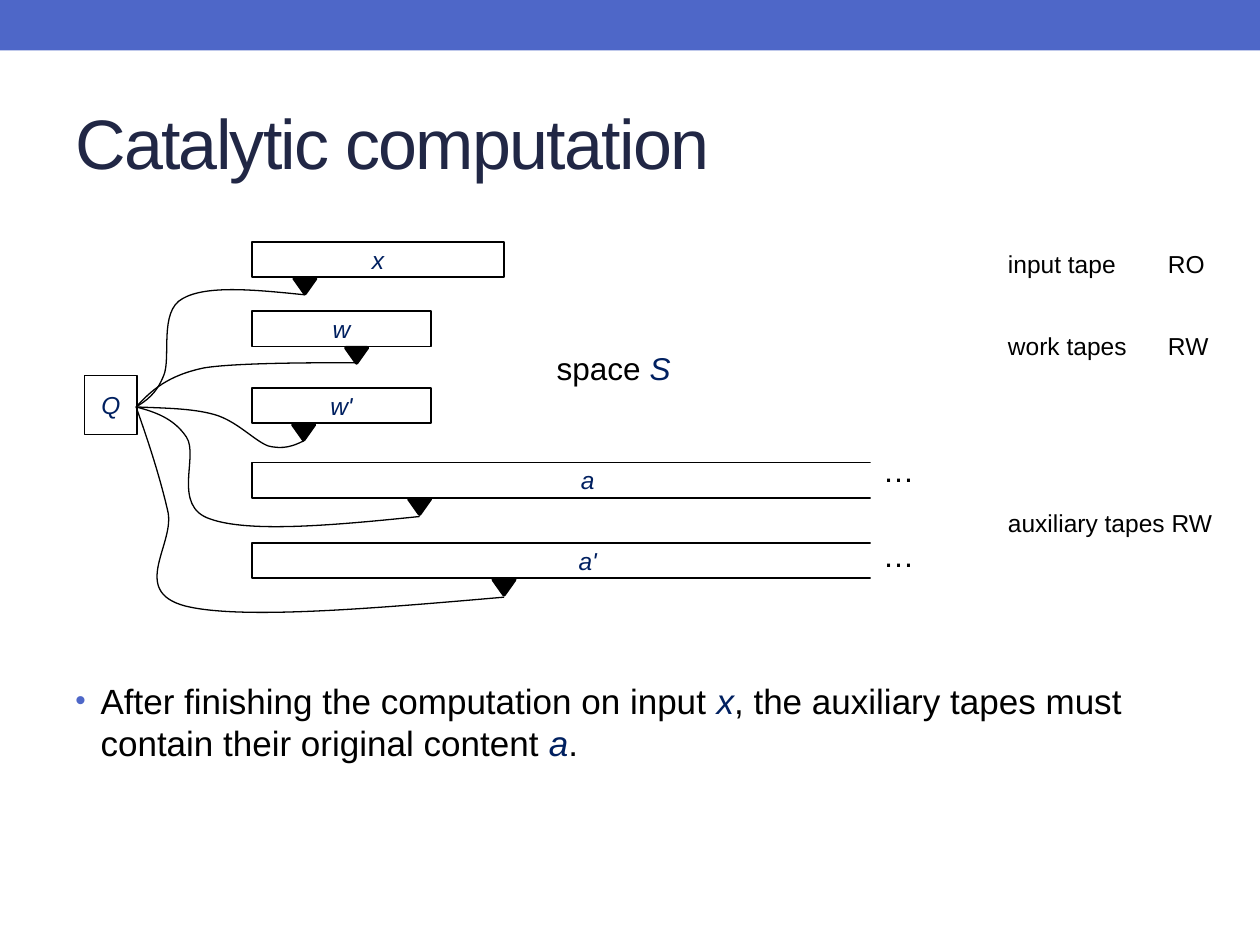
from dataclasses import dataclass

import pptx
import pptx.dml.color
import pptx.enum.shapes
import pptx.enum.text
import pptx.oxml.ns
import pptx.util
from lxml import etree
from pptx.util import Inches

SHAPE = pptx.enum.shapes.MSO_SHAPE
ANCHOR = pptx.enum.text.MSO_ANCHOR
ALIGN = pptx.enum.text.PP_ALIGN


def rgb(code):
    return pptx.dml.color.RGBColor.from_string(code)


@dataclass(frozen=True)
class Theme:
    font: str = "Arial"
    accent: str = "4E67C8"
    heading: str = "212745"
    ink: str = "000000"
    symbol: str = "002060"
    paper: str = "FFFFFF"
    title_size: int = 40
    body_size: int = 20
    note_size: int = 18
    label_size: int = 14


THEME = Theme()


@dataclass(frozen=True)
class Box:
    left: float
    top: float
    width: float
    height: float

    def inner(self, left, top, width, height):
        return Box(self.left + left, self.top + top, width, height)

    def lengths(self):
        return [Inches(v) for v in (self.left, self.top, self.width, self.height)]


@dataclass(frozen=True)
class Tape:
    symbol: str
    top: float
    width: float
    wire: tuple  # Bezier control points from the control unit to the head tip


TAPE_LEFT, TAPE_HEIGHT = 1.33, 0.28
WIRE_START = (0.41, 1.31)
TAPES = (
    Tape("x", 0, 2, (
        (0.49, 1.26), (0.57, 1.21), (0.63, 1.06), (0.69, 0.92), (0.59, 0.55),
        (0.78, 0.45), (0.97, 0.34), (1.36, 0.38), (1.75, 0.42))),
    Tape("w", 0.55, 1.42, (
        (0.53, 1.18), (0.66, 1.06), (0.95, 1.0),
        (1.25, 0.95), (2.16, 0.96), (2.16, 0.96))),
    Tape("w'", 1.16, 1.42, (
        (0.63, 1.32), (0.85, 1.32), (1.03, 1.37), (1.21, 1.42), (1.35, 1.58),
        (1.46, 1.62), (1.58, 1.65), (1.66, 1.62), (1.74, 1.58))),
    Tape("a", 1.75, 5.33, (
        (0.56, 1.35), (0.71, 1.4), (0.81, 1.55), (0.91, 1.7), (0.69, 2.1),
        (1.0, 2.2), (1.31, 2.31), (1.98, 2.25), (2.66, 2.18))),
    Tape("a'", 2.39, 5.33, (
        (0.51, 1.59), (0.6, 1.87), (0.66, 2.13), (0.73, 2.39), (0.35, 2.77),
        (0.8, 2.89), (1.24, 3.0), (2.29, 2.91), (3.33, 2.82))),
)


def style_shape(shape, fill=None, line=None, weight=1):
    shape.shadow.inherit = False
    if fill:
        shape.fill.solid()
        shape.fill.fore_color.rgb = rgb(fill)
    else:
        shape.fill.background()
    if line:
        shape.line.color.rgb = rgb(line)
        shape.line.width = pptx.util.Pt(weight)
    else:
        shape.line.fill.background()


def add_preset(page, kind, box, **style):
    shape = page.shapes.add_shape(kind, *box.lengths())
    style_shape(shape, **style)
    return shape


def set_frame(frame, anchor, across=0.1, down=0.05):
    frame.word_wrap = True
    frame.vertical_anchor = anchor
    frame.margin_left = frame.margin_right = Inches(across)
    frame.margin_top = frame.margin_bottom = Inches(down)


def write(para, spans, size, align=ALIGN.LEFT):
    """Fill a paragraph from (text, colour) pairs; symbols are set in italics."""
    para.alignment = align
    para.font.name = THEME.font
    para.font.size = pptx.util.Pt(size)
    for text, colour in spans:
        span = para.add_run()
        span.text = text
        span.font.color.rgb = rgb(colour)
        span.font.italic = colour == THEME.symbol


def add_text(page, box, spans, size, anchor=ANCHOR.TOP, **margins):
    frame = page.shapes.add_textbox(*box.lengths()).text_frame
    set_frame(frame, anchor, **margins)
    write(frame.paragraphs[0], spans, size)
    return frame.paragraphs[0]


def add_child(parent, tag, **attributes):
    return etree.SubElement(parent, pptx.oxml.ns.qn(tag), attributes)


def add_symbol_box(page, box, symbol):
    shape = add_preset(page, SHAPE.RECTANGLE, box, line=THEME.ink)
    set_frame(shape.text_frame, ANCHOR.MIDDLE, 0, 0.02)
    write(shape.text_frame.paragraphs[0], [(symbol, THEME.symbol)],
          THEME.label_size, ALIGN.CENTER)


def bezier_points(start, controls, steps=16):
    for index in range(0, len(controls), 3):
        corners = (start, *controls[index:index + 3])
        for step in range(1, steps + 1):
            t = step / steps
            weights = ((1 - t) ** 3, 3 * t * (1 - t) ** 2, 3 * t * t * (1 - t), t ** 3)
            yield tuple(sum(w * c[axis] for w, c in zip(weights, corners))
                        for axis in (0, 1))
        start = corners[3]


def add_wire(page, box, controls):
    """Draw a Bezier wire; points along the curve only give its tight bounds."""
    def place(point):
        return Inches(box.left + point[0]), Inches(box.top + point[1])

    builder = page.shapes.build_freeform(*place(WIRE_START))
    builder.add_line_segments([place(p) for p in bezier_points(WIRE_START, controls)],
                              close=False)
    wire = builder.convert_to_shape()
    style_shape(wire, line=THEME.ink, weight=0.75)
    outline = wire._element.find(".//" + pptx.oxml.ns.qn("a:path"))
    for segment in outline.findall(pptx.oxml.ns.qn("a:lnTo")):
        outline.remove(segment)
    for index, point in enumerate(controls):
        if index % 3 == 0:
            curve = add_child(outline, "a:cubicBezTo")
        x, y = place(point)
        add_child(curve, "a:pt", x=str(x - wire.left), y=str(y - wire.top))


def add_tape(page, box, tape):
    add_symbol_box(page, box.inner(TAPE_LEFT, tape.top, tape.width, TAPE_HEIGHT),
                   tape.symbol)
    tip = tape.wire[-1][0]
    head = add_preset(page, SHAPE.ISOSCELES_TRIANGLE,
                      box.inner(tip - 0.085, tape.top + TAPE_HEIGHT + 0.01, 0.17, 0.12),
                      fill=THEME.ink, line=THEME.ink, weight=2.08)
    head.rotation = 180
    add_wire(page, box, tape.wire)


def add_open_ends(page, box):
    """Cover the right ends of the auxiliary tapes and show that they go on."""
    frame = add_preset(page, SHAPE.RECTANGLE, box, fill=THEME.paper).text_frame
    set_frame(frame, ANCHOR.BOTTOM)
    for para in (frame.paragraphs[0], frame.add_paragraph()):
        write(para, [("…", THEME.ink)], THEME.note_size)
    para.space_before = pptx.util.Pt(26.5)


def add_machine(page, box):
    add_symbol_box(page, box.inner(0, 1.06, 0.42, 0.47), "Q")
    for tape in TAPES:
        add_tape(page, box, tape)
    add_open_ends(page, box.inner(6.24, 0.58, 1, 2.1))
    add_text(page, box.inner(3.65, 0.8, 1.25, 0.4),
             [("space ", THEME.ink), ("S", THEME.symbol)], THEME.note_size)


def add_tape_labels(page, box):
    labels = ((0, "input tape\tRO"), (0.65, "work tapes\tRW"), (2.05, "auxiliary tapes RW"))
    for top, label in labels:
        para = add_text(page, box.inner(0, top, box.width, TAPE_HEIGHT),
                        [(label, THEME.ink)], THEME.label_size, across=0, down=0.02)
        if "\t" in label:
            stops = etree.Element(pptx.oxml.ns.qn("a:tabLst"))
            add_child(stops, "a:tab", pos=str(Inches(1.27)), algn="l")
            para._p.pPr.find(pptx.oxml.ns.qn("a:defRPr")).addprevious(stops)


def add_title(page, box):
    para = add_text(page, box, [("Catalytic computation", THEME.heading)],
                    THEME.title_size, ANCHOR.MIDDLE)
    para.runs[0].font._element.set("spc", "-100")


def add_condition(page, box):
    para = add_text(page, box, [
        ("After finishing the computation on input ", THEME.ink), ("x", THEME.symbol),
        (", the auxiliary tapes must contain their original content ", THEME.ink),
        ("a", THEME.symbol), (".", THEME.ink)], THEME.body_size)
    para.space_before = pptx.util.Pt(6)
    layout = para._p.get_or_add_pPr()
    layout.set("marL", str(Inches(0.2)))
    layout.set("indent", str(-Inches(0.2)))
    # Bullet settings come before the default run properties.
    bullet = etree.Element(pptx.oxml.ns.qn("a:holder"))
    add_child(add_child(bullet, "a:buClr"), "a:srgbClr", val=THEME.accent)
    add_child(bullet, "a:buSzPct", val="85000")
    add_child(bullet, "a:buFont", typeface=THEME.font)
    add_child(bullet, "a:buChar", char="•")
    defaults = layout.find(pptx.oxml.ns.qn("a:defRPr"))
    for part in list(bullet):
        defaults.addprevious(part)


def main():
    deck = pptx.Presentation()
    deck.slide_width, deck.slide_height = Inches(10), Inches(7.5)
    page = deck.slides.add_slide(deck.slide_layouts[6])
    add_preset(page, SHAPE.RECTANGLE, Box(0, 0, 10, 0.4), fill=THEME.accent)
    add_title(page, Box(0.5, 0.58, 9, 1.08))
    add_condition(page, Box(0.5, 5.34, 9, 1.74))
    add_machine(page, Box(0.67, 1.92, 6.9, 3))
    add_tape_labels(page, Box(8, 1.96, 1.67, 2.33))
    deck.save("out.pptx")


if __name__ == "__main__":
    main()
